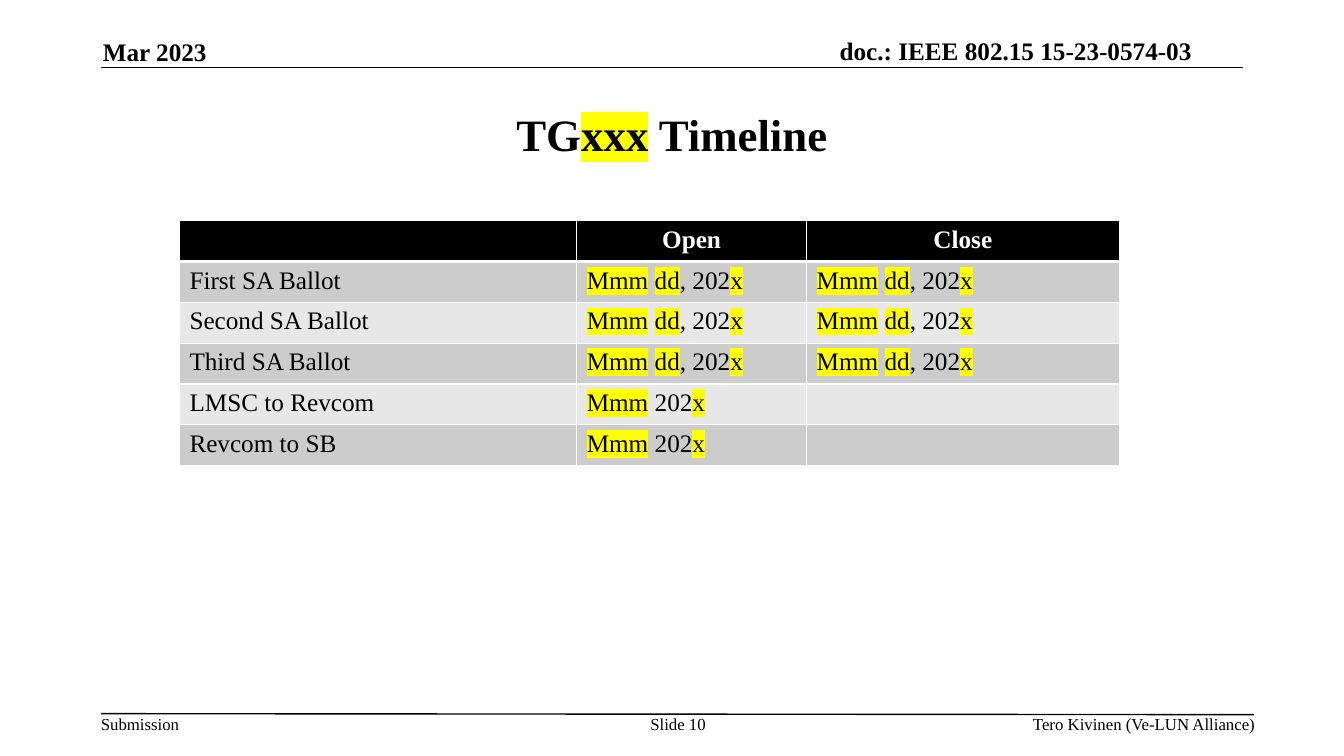
from dataclasses import dataclass

from lxml.etree import SubElement
from pptx import Presentation
from pptx.dml.color import RGBColor
from pptx.enum.shapes import MSO_CONNECTOR
from pptx.enum.text import MSO_ANCHOR as Anchor, MSO_AUTO_SIZE as AutoSize, PP_ALIGN as Align
from pptx.oxml.ns import qn
from pptx.util import Emu, Pt

EMU_PER_PX = 9144


@dataclass(frozen=True)
class Theme:
    font: str = "Times New Roman"
    ink: str = "000000"
    paper: str = "FFFFFF"
    mark: str = "FFFF00"
    bands: tuple = ("CCCCCC", "E7E7E7")
    title: int = 32
    body: int = 18
    footer: int = 12
    rule: float = 1
    grid: float = 0.96
    header_rule: float = 3


THEME = Theme()
DAY = "|Mmm| |dd|, 202|x|"
MONTH = "|Mmm| 202|x|"
HEADINGS = ("", "Open", "Close")
MILESTONES = [
    ("First SA Ballot", DAY, DAY),
    ("Second SA Ballot", DAY, DAY),
    ("Third SA Ballot", DAY, DAY),
    ("LMSC to Revcom", MONTH, ""),
    ("Revcom to SB", MONTH, ""),
]


def px(length):
    return Emu(length * EMU_PER_PX)


def color(code):
    return RGBColor.from_string(code)


def write(frame, text, size, bold=False, align=Align.LEFT, ink=THEME.ink):
    para = frame.paragraphs[0]
    para.alignment = align
    font = para.font
    font.name, font.size, font.bold = THEME.font, Pt(size), bold
    font.color.rgb = color(ink)
    for index, part in enumerate(text.split("|")):
        if part:
            span = para.add_run()
            span.text = part
            if index % 2:
                props = span.font._element if hasattr(span.font, "_element") else span._r.get_or_add_rPr()
                highlight = SubElement(props, qn("a:highlight"))
                SubElement(highlight, qn("a:srgbClr"), val=THEME.mark)


def add_label(slide, box, text, size, bold=False, align=Align.LEFT, anchor=Anchor.TOP):
    frame = slide.shapes.add_textbox(*map(px, box)).text_frame
    frame.margin_left = frame.margin_top = frame.margin_right = frame.margin_bottom = 0
    frame.word_wrap = True
    frame.vertical_anchor = anchor
    write(frame, text, size, bold, align)


def add_rule(slide, left, top, right, bottom):
    rule = slide.shapes.add_connector(MSO_CONNECTOR.STRAIGHT, *map(px, (left, top, right, bottom)))
    rule.line.color.rgb = color(THEME.ink)
    rule.line.width = Pt(THEME.rule)
    SubElement(rule._element.spPr, qn("a:effectLst"))


def add_header(slide, box):
    left, top, width, height = box
    add_rule(slide, left, top + height, left + width, top + height)
    add_label(slide, (left + 2, top + 1, 273, 30), "Mar 2023", THEME.body, True, anchor=Anchor.BOTTOM)
    add_label(slide, (left + 572, top, 510, 30), "doc.: IEEE 802.15 15-23-0574-03",
              THEME.body, True, Align.RIGHT, Anchor.BOTTOM)


def add_title(slide, box):
    title = slide.shapes.title
    title.left, title.top, title.width, title.height = map(px, box)
    frame = title.text_frame
    frame.auto_size = AutoSize.NONE
    frame.word_wrap = True
    frame.vertical_anchor = Anchor.MIDDLE
    write(frame, "TG|xxx| Timeline", THEME.title, True, Align.CENTER)


def add_borders(cell, top, bottom):
    props = cell._tc.get_or_add_tcPr()
    widths = {"L": THEME.grid, "R": THEME.grid, "T": top, "B": bottom}
    for side, width in widths.items():
        line = SubElement(props, qn(f"a:ln{side}"), w=str(Pt(width)))
        fill = SubElement(line, qn("a:solidFill"))
        SubElement(fill, qn("a:srgbClr"), val=THEME.paper)


def add_timeline(slide, box):
    rows = [HEADINGS, *MILESTONES]
    table = slide.shapes.add_table(len(rows), len(HEADINGS), *map(px, box)).table
    table.horz_banding = False
    for column, width in zip(table.columns, (394, 228, box[2] - 394 - 228)):
        column.width = px(width)
    for row, texts in enumerate(rows):
        heading = row == 0
        fill = THEME.ink if heading else THEME.bands[(row - 1) % 2]
        ink = THEME.paper if heading else THEME.ink
        align = Align.CENTER if heading else Align.LEFT
        top = THEME.header_rule if row == 1 else THEME.grid
        bottom = THEME.header_rule if heading else THEME.grid
        for column, text in enumerate(texts):
            cell = table.cell(row, column)
            add_borders(cell, top, bottom)
            cell.fill.solid()
            cell.fill.fore_color.rgb = color(fill)
            write(cell.text_frame, text, THEME.body, heading, align, ink)


def add_footer(slide, box):
    left, top, width, height = box
    add_rule(slide, left, top, left + width, top + 1)
    add_label(slide, (left, top, 78, height), "Submission", THEME.footer)
    add_label(slide, (left + 534, top, 77, height), "Slide 10", THEME.footer, align=Align.CENTER)
    add_label(slide, (left + width - 463, top, 464, height), "Tero Kivinen (Ve-LUN Alliance)",
              THEME.footer, align=Align.RIGHT)


def main():
    deck = Presentation()
    deck.slide_width, deck.slide_height = px(1333), px(750)
    slide = deck.slides.add_slide(deck.slide_layouts[5])
    add_header(slide, (100, 35, 1133, 32))
    add_title(slide, (100, 75, 1133, 116))
    add_timeline(slide, (178, 219, 932, 243))
    add_footer(slide, (100, 708, 1144, 20))
    deck.save("out.pptx")


if __name__ == "__main__":
    main()
